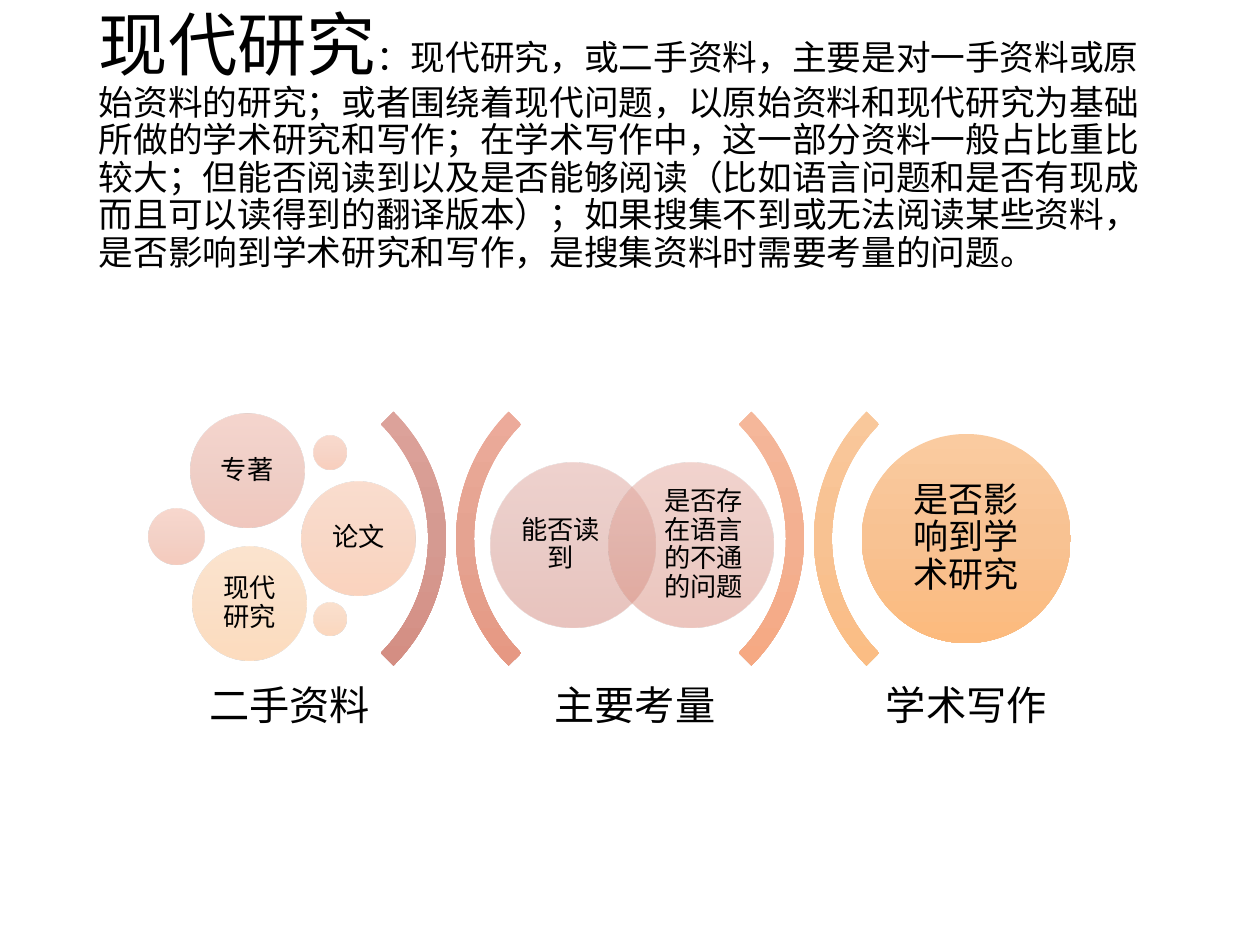
from copy import deepcopy
from math import sqrt

from pptx import Presentation
from pptx.dml.color import RGBColor
from pptx.enum.shapes import MSO_SHAPE
from pptx.enum.text import MSO_ANCHOR, PP_ALIGN
from pptx.oxml import parse_xml
from pptx.util import Pt

ELLIPSE, BLOCK_ARC = MSO_SHAPE.OVAL, MSO_SHAPE.BLOCK_ARC
MIDDLE = MSO_ANCHOR.MIDDLE
LEFT, CENTER = PP_ALIGN.LEFT, PP_ALIGN.CENTER
ALPHA = '<a:alpha xmlns:a="http://schemas.openxmlformats.org/drawingml/2006/main" val="50000"/>'

COLORS = {
    "text": "000000",
    "rose": ("E0A69E", "D59A91", "D4887C"),
    "blush": ("E6A99E", "DC9D91", "DB8C7C"),
    "pink": ("EDAD9E", "E2A191", "E3917C"),
    "salmon": ("EFAE9E", "E5A391", "E6937C"),
    "coral": ("F3B29E", "E9A691", "EC987C"),
    "shell": ("F5B79E", "F1AC91", "F49F7C"),
    "peach": ("F6BB9E", "F3B091", "F7A57C"),
    "apricot": ("F7BD9F", "F4B391", "F8A87C"),
    "sand": ("F8C49F", "F6BA91", "FAB17D"),
    "orange": ("FACBA0", "F8C292", "FCBA7D"),
}


def write(paragraph, text, size, font="Times New Roman", color="text", align=CENTER):
    paragraph.alignment = align
    paragraph.line_spacing = 0.9
    run = paragraph.add_run()
    run.text = text
    run.font.size = Pt(size)
    run.font.name = font
    run.font.color.rgb = RGBColor.from_string(COLORS[color])


class Diagram:
    """Draws gradient shapes and centred labels on one slide."""

    def __init__(self, slide):
        self.shapes = slide.shapes

    def text_box(self, left, top, width, height, runs, insets, align=CENTER):
        box = self.shapes.add_textbox(Pt(left), Pt(top), Pt(width), Pt(height))
        frame = box.text_frame
        frame.word_wrap = True
        frame.vertical_anchor = MIDDLE
        frame.margin_left = frame.margin_right = Pt(insets[0])
        frame.margin_top = frame.margin_bottom = Pt(insets[1])
        for text, size in runs:
            write(frame.paragraphs[0], text, size, align=align)

    def gradient_shape(self, kind, left, top, size, palette, translucent=False):
        shape = self.shapes.add_shape(kind, Pt(left), Pt(top), Pt(size), Pt(size))
        shape.shadow.inherit = False
        shape.line.fill.background()
        shape.fill.gradient()
        shape.fill.gradient_angle = 270
        gradient = shape._element.spPr.gradFill
        gradient.set("rotWithShape", "0")
        gradient.gsLst.insert(1, deepcopy(gradient.gsLst[0]))
        for stop, position, color in zip(shape.fill.gradient_stops, (0, 0.5, 1), COLORS[palette]):
            stop.position = position
            stop.color.rgb = RGBColor.from_string(color)
        if translucent:
            for stop in gradient.gsLst:
                stop[0].append(parse_xml(ALPHA))
        return shape

    def bracket(self, left, rotation, palette):
        arc = self.gradient_shape(BLOCK_ARC, left, 205.2, 205.2, palette)
        arc.rotation = rotation
        for index, value in enumerate((135, 189, 0.05)):
            arc.adjustments[index] = value

    def circle(self, left, top, size, palette, label="", font_size=15, translucent=True):
        self.gradient_shape(ELLIPSE, left, top, size, palette, translucent)
        if label:
            side = size / sqrt(2)
            edge = (size - side) / 2
            inset = font_size * 0.28
            self.text_box(left + edge, top + edge, side, side, [(label, font_size)], (inset, inset))

    def venn_circle(self, left, palette, label, shift):
        top, size, width, height = 264.3, 94.4, 54, 72
        self.circle(left, top, size, palette)
        self.text_box(left + (size - width) / 2 + shift, top + (size - height) / 2,
                      width, height, [(label, 15)], (0, 0))

    def caption(self, left, label):
        self.text_box(left, 383.8, 155.5, 41, [(label, 23)], (7.2, 7.2))


def main():
    deck = Presentation()
    deck.slide_width, deck.slide_height = Pt(720), Pt(540)
    diagram = Diagram(deck.slides.add_slide(deck.slide_layouts[6]))

    heading = [
        ("现代研究", 39.6),
        ("：现代研究，或二手资料，主要是对一手资料或原始资料的研究；"
         "或者围绕着现代问题，以原始资料和现代研究为基础所做的学术研究和写作；"
         "在学术写作中，这一部分资料一般占比重比较大；"
         "但能否阅读到以及是否能够阅读（比如语言问题和是否有现成而且可以读得到的翻译版本）；"
         "如果搜集不到或无法阅读某些资料，是否影响到学术研究和写作，"
         "是搜集资料时需要考量的问题。", 19.8),
    ]
    diagram.text_box(49.5, 28.75, 621, 104.4, heading, (7.2, 3.6), LEFT)

    for left, rotation, palette in (
        (49.7, 90, "rose"), (260.6, 270, "salmon"),
        (254.2, 90, "peach"), (465.1, 270, "orange"),
    ):
        diagram.bracket(left, rotation, palette)

    diagram.venn_circle(280.1, "rose", "能否读到", -7)
    diagram.venn_circle(347.8, "blush", "是否存在语言的不通的问题", 7)

    for left, top, size, palette, label in (
        (108.7, 236.6, 65, "pink", "专著"),
        (84.8, 290.7, 32, "coral", ""),
        (179, 249.2, 19, "shell", ""),
        (172.2, 275.2, 65, "apricot", "论文"),
        (179, 344.4, 19, "sand", ""),
        (110, 312.3, 65, "orange", "现代研究"),
    ):
        diagram.circle(left, top, size, palette, label)
    diagram.circle(492.4, 248, 119.5, "orange", "是否影响到学术研究", 20, False)

    for left, label in ((87.8, "二手资料"), (285.1, "主要考量"), (474.5, "学术写作")):
        diagram.caption(left, label)

    deck.save("out.pptx")


if __name__ == "__main__":
    main()
